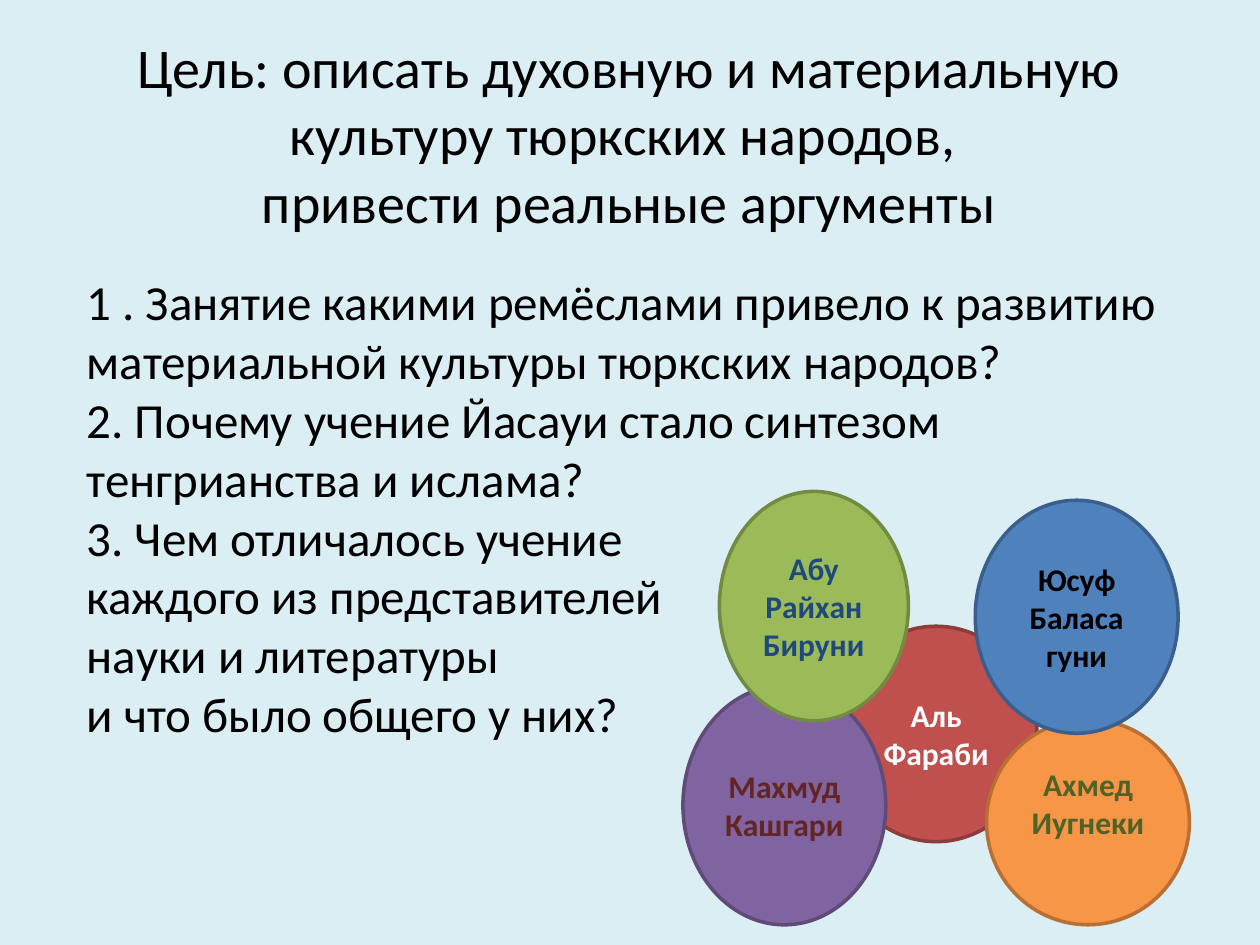
from pptx import Presentation
from pptx.dml.color import RGBColor
from pptx.enum.shapes import MSO_SHAPE
from pptx.enum.text import MSO_ANCHOR, PP_ALIGN
from pptx.util import Inches, Pt

OVAL = MSO_SHAPE.OVAL
TOP, MIDDLE = MSO_ANCHOR.TOP, MSO_ANCHOR.MIDDLE
LEFT, CENTER = PP_ALIGN.LEFT, PP_ALIGN.CENTER

BACKGROUND = RGBColor(0xDB, 0xEE, 0xF4)
BLACK = RGBColor(0x00, 0x00, 0x00)
WHITE = RGBColor(0xFF, 0xFF, 0xFF)
RED, DARK_RED = RGBColor(0xC0, 0x50, 0x4D), RGBColor(0x8E, 0x3B, 0x39)
PURPLE, DARK_PURPLE = RGBColor(0x80, 0x64, 0xA2), RGBColor(0x5F, 0x4A, 0x78)
GREEN, DARK_GREEN = RGBColor(0x9B, 0xBB, 0x59), RGBColor(0x73, 0x8A, 0x42)
ORANGE, DARK_ORANGE = RGBColor(0xF7, 0x96, 0x46), RGBColor(0xB7, 0x6F, 0x34)
BLUE, DARK_BLUE = RGBColor(0x4F, 0x81, 0xBD), RGBColor(0x3A, 0x5F, 0x8C)
MAROON = RGBColor(0x63, 0x25, 0x23)
NAVY = RGBColor(0x1F, 0x49, 0x7D)
OLIVE = RGBColor(0x4F, 0x62, 0x28)

GOAL = [
    "Цель: описать духовную и материальную культуру тюркских народов, ",
    "привести реальные аргументы",
]
QUESTIONS = [
    "1 . Занятие какими ремёслами привело к развитию материальной культуры тюркских народов? \n"
    "2. Почему учение Йасауи стало синтезом тенгрианства и ислама?\n"
    "3. Чем отличалось учение \n"
    "каждого из представителей \n"
    "науки и литературы\n"
    "и что было общего у них?"
]

# Back to front: paragraphs, box, fill, outline, text colour, bottom inset
THINKERS = [
    (["Аль Фараби"], (6.63, 4.97, 1.6, 1.71), RED, DARK_RED, WHITE, 0.05),
    (["Махмуд Кашгари"], (5.42, 5.44, 1.61, 1.9), PURPLE, DARK_PURPLE, MAROON, 0.05),
    (["Абу Райхан Бируни"], (5.71, 3.9, 1.5, 1.82), GREEN, DARK_GREEN, NAVY, 0.05),
    (["Ахмед Иугнеки"], (7.83, 5.71, 1.61, 1.63), ORANGE, DARK_ORANGE, OLIVE, 0.35),
    (["Юсуф Баласа", "гуни"], (7.74, 3.97, 1.61, 1.85), BLUE, DARK_BLUE, BLACK, 0.05),
]


def write_text(shape, paragraphs, font_format, alignment, anchor, bottom_inset=0.05):
    frame = shape.text_frame
    frame.word_wrap = True
    frame.vertical_anchor = anchor
    frame.margin_bottom = Inches(bottom_inset)
    for index, text in enumerate(paragraphs):
        paragraph = frame.add_paragraph() if index else frame.paragraphs[0]
        paragraph.text = text
        paragraph.alignment = alignment
        for run in paragraph.runs:
            run.font.color.rgb = font_format["color"]
            for name in ("name", "size", "bold"):
                setattr(run.font, name, font_format[name])


def font(size, color, bold=False):
    return {"name": "Calibri", "size": Pt(size), "bold": bold, "color": color}


def add_text(slide, box, *text_arguments):
    shape = slide.shapes.add_textbox(*map(Inches, box))
    write_text(shape, *text_arguments)


def add_thinker(slide, paragraphs, box, fill, outline, text_color, bottom_inset):
    shape = slide.shapes.add_shape(OVAL, *map(Inches, box))
    shape.shadow.inherit = False
    shape.fill.solid()
    shape.fill.fore_color.rgb = fill
    shape.line.color.rgb = outline
    shape.line.width = Pt(2)
    write_text(shape, paragraphs, font(18, text_color, True), CENTER, MIDDLE, bottom_inset)


def main():
    presentation = Presentation()
    presentation.slide_width, presentation.slide_height = Inches(10), Inches(7.5)
    slide = presentation.slides.add_slide(presentation.slide_layouts[6])
    slide.background.fill.solid()
    slide.background.fill.fore_color.rgb = BACKGROUND

    add_text(slide, (0.98, 0.21, 8.03, 1.72), GOAL, font(32, BLACK), CENTER, TOP)
    # The deep bottom inset lifts the questions clear of the ovals
    add_text(slide, (0.59, 2.33, 9.13, 4.33), QUESTIONS, font(28, BLACK), LEFT, MIDDLE, 0.99)
    for thinker in THINKERS:
        add_thinker(slide, *thinker)

    presentation.save("out.pptx")


if __name__ == "__main__":
    main()
